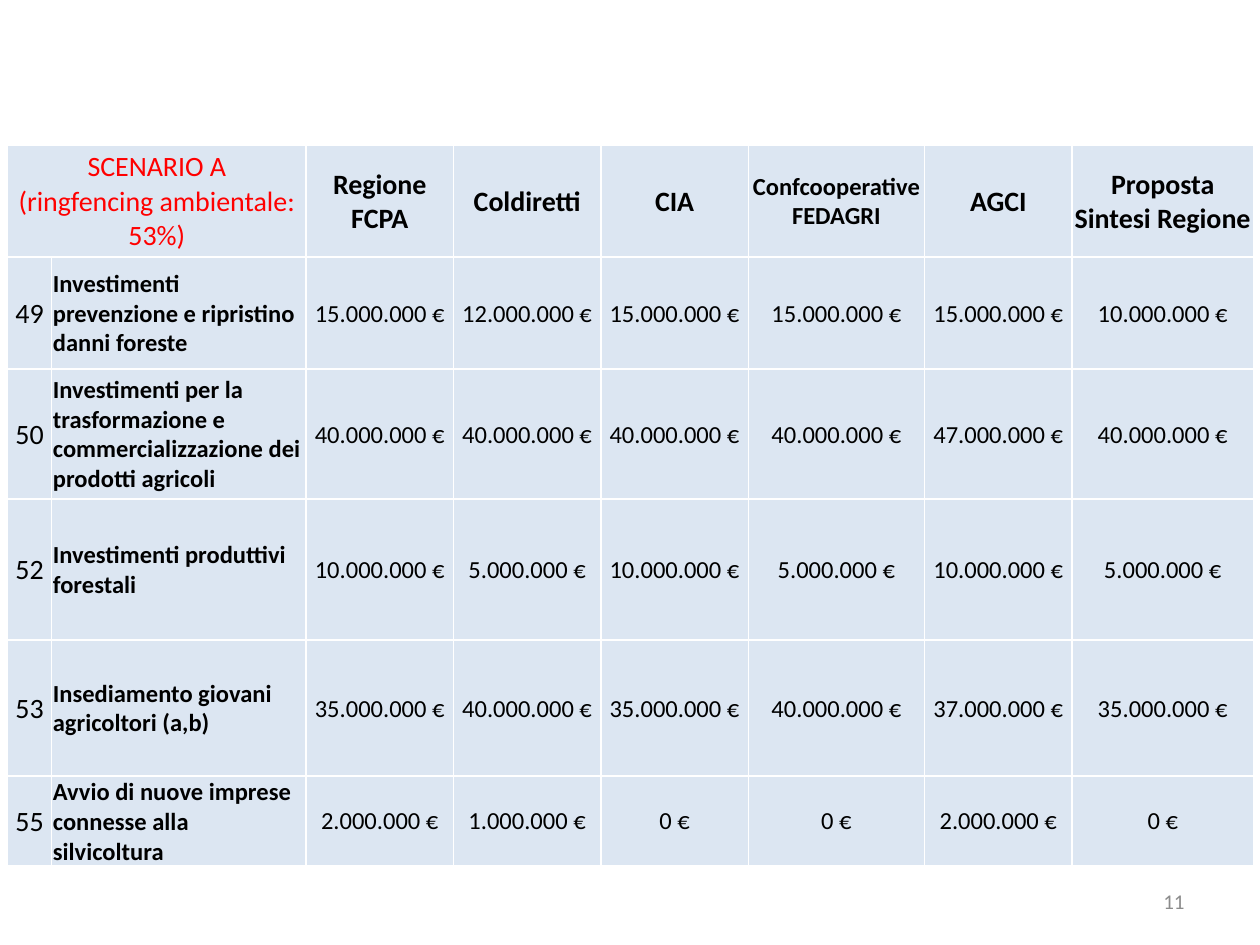
from dataclasses import dataclass

from lxml.etree import SubElement
from pptx import Presentation
from pptx.dml.color import RGBColor
from pptx.enum.text import MSO_ANCHOR, PP_ALIGN
from pptx.oxml.ns import qn
from pptx.slide import Slide
from pptx.table import Table, _Cell
from pptx.text.text import TextFrame
from pptx.util import Inches, Pt


@dataclass(frozen=True)
class Theme:
    face: str = "Calibri"
    ink: str = "000000"
    alert: str = "FF0000"
    muted: str = "8C8C8C"
    panel: str = "DCE6F2"
    rule: str = "FFFFFF"
    head: int = 16
    body: int = 14
    foot: int = 12
    line: int = 1


THEME = Theme()


@dataclass(frozen=True)
class Style:
    size: int
    bold: bool = False
    color: str = THEME.ink
    align: PP_ALIGN = PP_ALIGN.CENTER
    anchor: MSO_ANCHOR = MSO_ANCHOR.MIDDLE


@dataclass(frozen=True)
class Measure:
    code: int
    label: str
    funds: tuple[float, ...]
    height: float
    anchor: MSO_ANCHOR = MSO_ANCHOR.MIDDLE


TITLE = Style(THEME.head, color=THEME.alert)
HEAD = Style(THEME.head, bold=True)
SMALL = Style(THEME.body, bold=True)
CODE = Style(THEME.head)
FUND = Style(THEME.body)
PAGE = Style(THEME.foot, color=THEME.muted, align=PP_ALIGN.RIGHT)

WIDTHS = (0.35, 2.02, 1.17, 1.17, 1.17, 1.4, 1.17, 1.44)
TOP = 0.89
SCENARIO = "SCENARIO A\n(ringfencing ambientale: 53%)"
HEADS = (
    ("Regione\nFCPA", HEAD),
    ("Coldiretti", HEAD),
    ("CIA", HEAD),
    ("Confcooperative\vFEDAGRI", SMALL),
    ("AGCI", HEAD),
    ("Proposta Sintesi Regione", HEAD),
)
ROWS = (
    Measure(49, "Investimenti prevenzione e ripristino danni foreste",
            (15, 12, 15, 15, 15, 10), 0.89),
    Measure(50, "Investimenti per la trasformazione e commercializzazione "
            "dei prodotti agricoli", (40, 40, 40, 40, 47, 40), 1.03),
    Measure(52, "Investimenti produttivi forestali",
            (10, 5, 10, 5, 10, 5), 1.12),
    Measure(53, "Insediamento giovani agricoltori (a,b)",
            (35, 40, 35, 40, 37, 35), 1.08),
    Measure(55, "Avvio di nuove imprese connesse alla silvicoltura",
            (2, 1, 0, 0, 2, 0), 0.68, MSO_ANCHOR.BOTTOM),
)


def euro(millions: float) -> str:
    return f"{millions * 1_000_000:,} €".replace(",", ".")


def write(frame: TextFrame, text: str, style: Style) -> None:
    frame.text = text
    form = {"name": THEME.face, "size": Pt(style.size), "bold": style.bold}
    for para in frame.paragraphs:
        para.alignment = style.align
        for run in para.runs:
            for key, value in form.items():
                setattr(run.font, key, value)
            run.font.color.rgb = RGBColor.from_string(style.color)


def border(cell: _Cell) -> None:
    props = cell._tc.get_or_add_tcPr()
    for side in ("L", "R", "T", "B"):
        line = SubElement(props, qn(f"a:ln{side}"), w=str(Pt(THEME.line)))
        fill = SubElement(line, qn("a:solidFill"))
        SubElement(fill, qn("a:srgbClr"), val=THEME.rule)


def paint(cell: _Cell, text: str, style: Style) -> None:
    edge = Inches(0.01)
    form = {
        "margin_left": edge,
        "margin_right": edge,
        "margin_top": edge,
        "margin_bottom": 0,
        "vertical_anchor": style.anchor,
    }
    for key, value in form.items():
        setattr(cell, key, value)
    border(cell)
    cell.fill.solid()
    cell.fill.fore_color.rgb = RGBColor.from_string(THEME.panel)
    write(cell.text_frame, text, style)


def header(table: Table) -> None:
    paint(table.cell(0, 0), SCENARIO, TITLE)
    paint(table.cell(0, 1), "", TITLE)
    table.cell(0, 0).merge(table.cell(0, 1))
    for col, (text, style) in enumerate(HEADS, 2):
        paint(table.cell(0, col), text, style)


def entry(table: Table, row: int, item: Measure) -> None:
    label = Style(THEME.body, True, align=PP_ALIGN.LEFT, anchor=item.anchor)
    paint(table.cell(row, 0), str(item.code), CODE)
    paint(table.cell(row, 1), item.label, label)
    for col, fund in enumerate(item.funds, 2):
        paint(table.cell(row, col), euro(fund), FUND)


def grid(slide: Slide) -> None:
    heights = (TOP, *(item.height for item in ROWS))
    table = slide.shapes.add_table(
        len(heights), len(WIDTHS), Inches(0.06), Inches(1.15),
        Inches(sum(WIDTHS)), Inches(sum(heights)),
    ).table
    for col, width in zip(table.columns, WIDTHS):
        col.width = Inches(width)
    for row, height in zip(table.rows, heights):
        row.height = Inches(height)
    header(table)
    for row, item in enumerate(ROWS, 1):
        entry(table, row, item)


def number(slide: Slide, text: str) -> None:
    box = slide.shapes.add_textbox(
        Inches(7.17), Inches(6.95), Inches(2.33), Inches(0.4))
    frame = box.text_frame
    form = {"word_wrap": True, "vertical_anchor": PAGE.anchor}
    for key, value in form.items():
        setattr(frame, key, value)
    write(frame, text, PAGE)


def main() -> None:
    deck = Presentation()
    deck.slide_width, deck.slide_height = Inches(10), Inches(7.5)
    slide = deck.slides.add_slide(deck.slide_layouts[6])
    number(slide, "11")
    grid(slide)
    deck.save("out.pptx")


if __name__ == "__main__":
    main()
